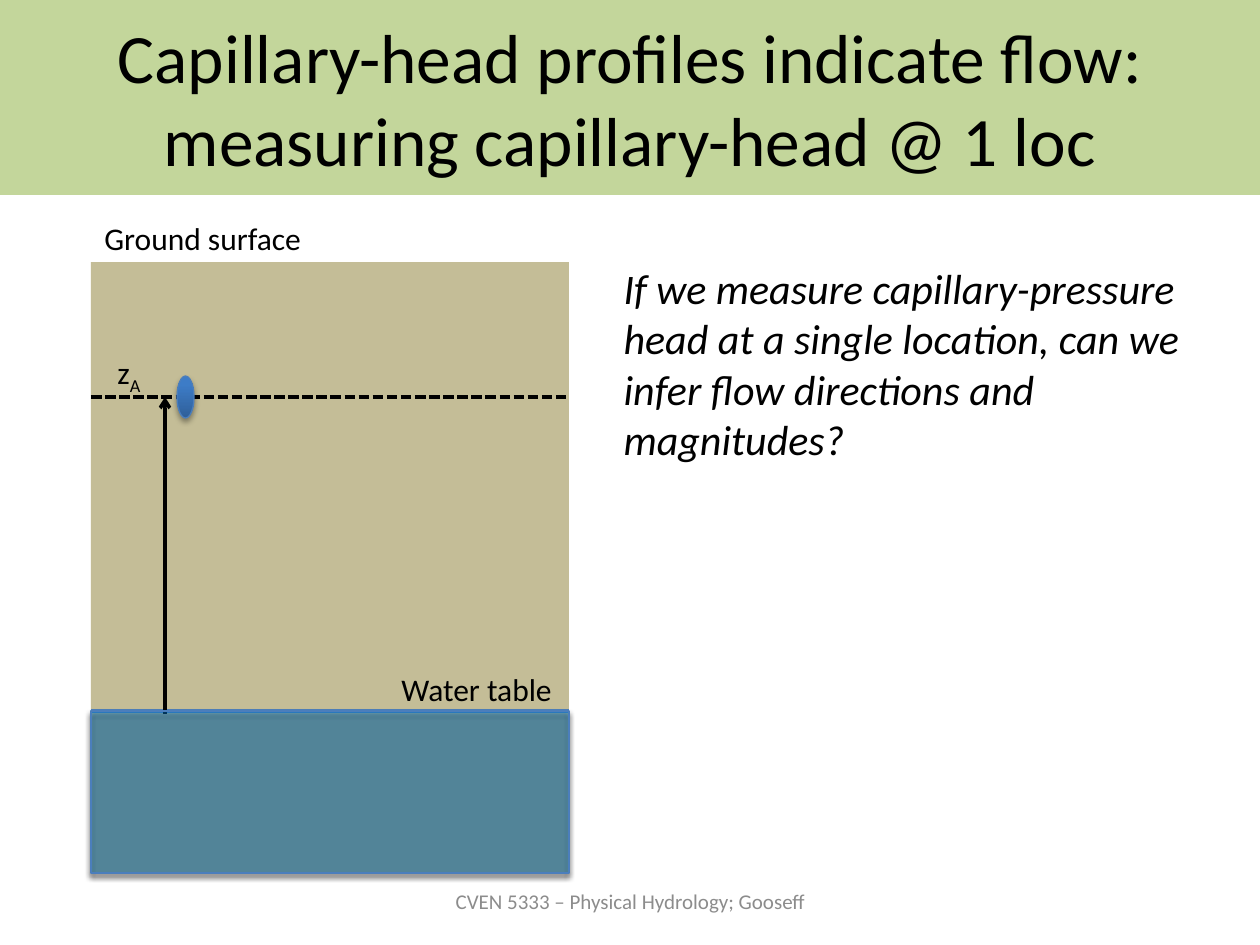
from dataclasses import dataclass

from lxml.etree import SubElement
from pptx import Presentation
from pptx.dml.color import RGBColor
from pptx.enum.dml import MSO_LINE
from pptx.enum.shapes import MSO_CONNECTOR, MSO_SHAPE
from pptx.enum.text import MSO_ANCHOR, MSO_AUTO_SIZE, PP_ALIGN
from pptx.oxml.ns import qn
from pptx.util import Emu, Pt

EMU_PER_PX = 914400 / 126
BLACK = "000000"
SOIL_LEFT, SOIL_TOP, SOIL_WIDTH, SOIL_HEIGHT = 91, 262, 478, 611
SOIL_RIGHT, SOIL_BOTTOM = SOIL_LEFT + SOIL_WIDTH, SOIL_TOP + SOIL_HEIGHT
WATER_TABLE, PROBE_LEVEL, ELEVATION_X = 711, 397, 165


@dataclass
class Box:
    left: int
    top: int
    width: int
    height: int


@dataclass
class Label:
    box: Box
    words: str
    subscript: str = ""
    size: float = 18
    colour: str = BLACK
    wrap: bool = False
    align: PP_ALIGN = PP_ALIGN.LEFT
    anchor: MSO_ANCHOR = MSO_ANCHOR.TOP


@dataclass
class Rule:
    start: tuple[int, int]
    end: tuple[int, int]
    colour: str = BLACK
    dashed: bool = False
    arrow: bool = False


LABELS = [
    Label(Box(389, 664, 179, 50), "Water table"),
    Label(Box(92, 213, 226, 50), "Ground surface"),
    Label(Box(105, 347, 81, 50), "z", subscript="A", wrap=True),
    Label(Box(431, 876, 399, 50), "CVEN 5333 – Physical Hydrology; Gooseff", size=12,
          colour="8C8C8C", wrap=True, align=PP_ALIGN.CENTER, anchor=MSO_ANCHOR.MIDDLE),
]
RULES = [
    Rule((SOIL_LEFT, WATER_TABLE), (SOIL_RIGHT, WATER_TABLE), colour="4F81BD"),
    Rule((ELEVATION_X, 714), (ELEVATION_X, PROBE_LEVEL), arrow=True),
    Rule((SOIL_LEFT, PROBE_LEVEL), (SOIL_RIGHT, PROBE_LEVEL), dashed=True),
]


def px(length: int) -> Emu:
    """Turn pixels into EMU."""
    return Emu(round(length * EMU_PER_PX))


def rgb(colour: str) -> RGBColor:
    """Turn a hex string into a colour."""
    return RGBColor.from_string(colour)


def place(shape, box: Box) -> None:
    """Move and size a shape."""
    shape.left, shape.top = px(box.left), px(box.top)
    shape.width, shape.height = px(box.width), px(box.height)


def paint(shape, colour: str) -> None:
    """Give a shape a solid fill."""
    shape.fill.solid()
    shape.fill.fore_color.rgb = rgb(colour)


def style(paragraph, size: float, colour: str, align: PP_ALIGN, italic: bool = False) -> None:
    """Set the font and alignment of a paragraph."""
    paragraph.alignment = align
    paragraph.font.name, paragraph.font.size = "Calibri", Pt(size)
    paragraph.font.color.rgb = rgb(colour)
    paragraph.font.italic = italic


def add_area(slide, kind: MSO_SHAPE, box: Box):
    """Add a shape without outline, shadow or text."""
    area = slide.shapes.add_shape(kind, *map(px, (box.left, box.top, box.width, box.height)))
    area.line.fill.background()
    area.shadow.inherit = False
    return area


def raise_edge(shape) -> None:
    """Give a shape a thin blue outline and a soft shadow below it."""
    shape.line.color.rgb, shape.line.width = rgb("4B7EBC"), Pt(0.75)
    effects = shape._element.spPr.find(qn("a:effectLst"))
    shadow = SubElement(effects, qn("a:outerShdw"), blurRad=str(Pt(3.1)),
                        dist=str(Pt(1.8)), dir="5400000", rotWithShape="0")
    black = SubElement(shadow, qn("a:srgbClr"), val=BLACK)
    SubElement(black, qn("a:alpha"), val="35000")


def add_rule(slide, rule: Rule) -> None:
    """Draw a straight line, dashed or with an arrowhead if asked."""
    connector = slide.shapes.add_connector(
        MSO_CONNECTOR.STRAIGHT, *map(px, (*rule.start, *rule.end)))
    connector.line.color.rgb, connector.line.width = rgb(rule.colour), Pt(2)
    if rule.dashed:
        connector.line.dash_style = MSO_LINE.SQUARE_DOT
    if rule.arrow:
        SubElement(connector.line._get_or_add_ln(), qn("a:tailEnd"), type="arrow")
    SubElement(connector._element.spPr, qn("a:effectLst"))


def add_label(slide, label: Label) -> None:
    """Add a one-line text box, with a subscript if there is one."""
    textbox = slide.shapes.add_textbox(0, 0, 0, 0)
    place(textbox, label.box)
    frame = textbox.text_frame
    frame.word_wrap, frame.vertical_anchor = label.wrap, label.anchor
    paragraph = frame.paragraphs[0]
    paragraph.add_run().text = label.words
    style(paragraph, label.size, label.colour, label.align)
    if label.subscript:
        index = paragraph.add_run()
        index.text = label.subscript
        index._r.get_or_add_rPr().set("baseline", "-25000")


def fill_title(title) -> None:
    """Write the title on its green band."""
    place(title, Box(0, 0, 1260, 195))
    paint(title, "C3D69B")
    frame = title.text_frame
    frame.text = "Capillary-head profiles indicate flow:\vmeasuring capillary-head @ 1 loc"
    frame.auto_size, frame.vertical_anchor = MSO_AUTO_SIZE.NONE, MSO_ANCHOR.MIDDLE
    style(frame.paragraphs[0], 39.6, BLACK, PP_ALIGN.CENTER)


def fill_question(body) -> None:
    """Write the question as plain italic text."""
    place(body, Box(611, 256, 633, 217))
    frame = body.text_frame
    frame.text = ("If we measure capillary-pressure head at a single location, "
                  "can we infer flow directions and magnitudes?")
    frame.auto_size = MSO_AUTO_SIZE.NONE
    question = frame.paragraphs[0]
    question.space_before = Pt(0)
    properties = question._p.get_or_add_pPr()
    properties.set("marL", "0")
    properties.set("indent", "0")
    SubElement(properties, qn("a:buNone"))
    style(question, 24, BLACK, PP_ALIGN.LEFT, italic=True)


def add_probe(slide) -> None:
    """Add the measuring point with its blue gradient."""
    probe = add_area(slide, MSO_SHAPE.OVAL, Box(177, 376, 17, 42))
    probe.fill.gradient()
    probe.fill.gradient_angle = 90
    for stop, position, colour in zip(probe.fill.gradient_stops, (0, 0.8), ("2F5F99", "3D7CC7")):
        stop.position, stop.color.rgb = position, rgb(colour)
    raise_edge(probe)


def add_groundwater(slide) -> None:
    """Add the see-through water body below the water table."""
    water = add_area(slide, MSO_SHAPE.RECTANGLE,
                     Box(SOIL_LEFT, WATER_TABLE, SOIL_WIDTH, SOIL_BOTTOM - WATER_TABLE))
    paint(water, "0096FF")
    tint = water._element.spPr.find(qn("a:solidFill")).find(qn("a:srgbClr"))
    SubElement(tint, qn("a:alpha"), val="35000")
    raise_edge(water)


def main() -> None:
    """Build the slide and save it."""
    deck = Presentation()
    deck.slide_width, deck.slide_height = px(1260), px(945)
    slide = deck.slides.add_slide(deck.slide_layouts[1])
    fill_title(slide.shapes.title)
    fill_question(slide.placeholders[1])
    soil = add_area(slide, MSO_SHAPE.RECTANGLE, Box(SOIL_LEFT, SOIL_TOP, SOIL_WIDTH, SOIL_HEIGHT))
    paint(soil, "C4BD97")
    for rule in RULES:
        add_rule(slide, rule)
    add_probe(slide)
    for label in LABELS:
        add_label(slide, label)
    add_groundwater(slide)
    deck.save("out.pptx")


if __name__ == "__main__":
    main()
